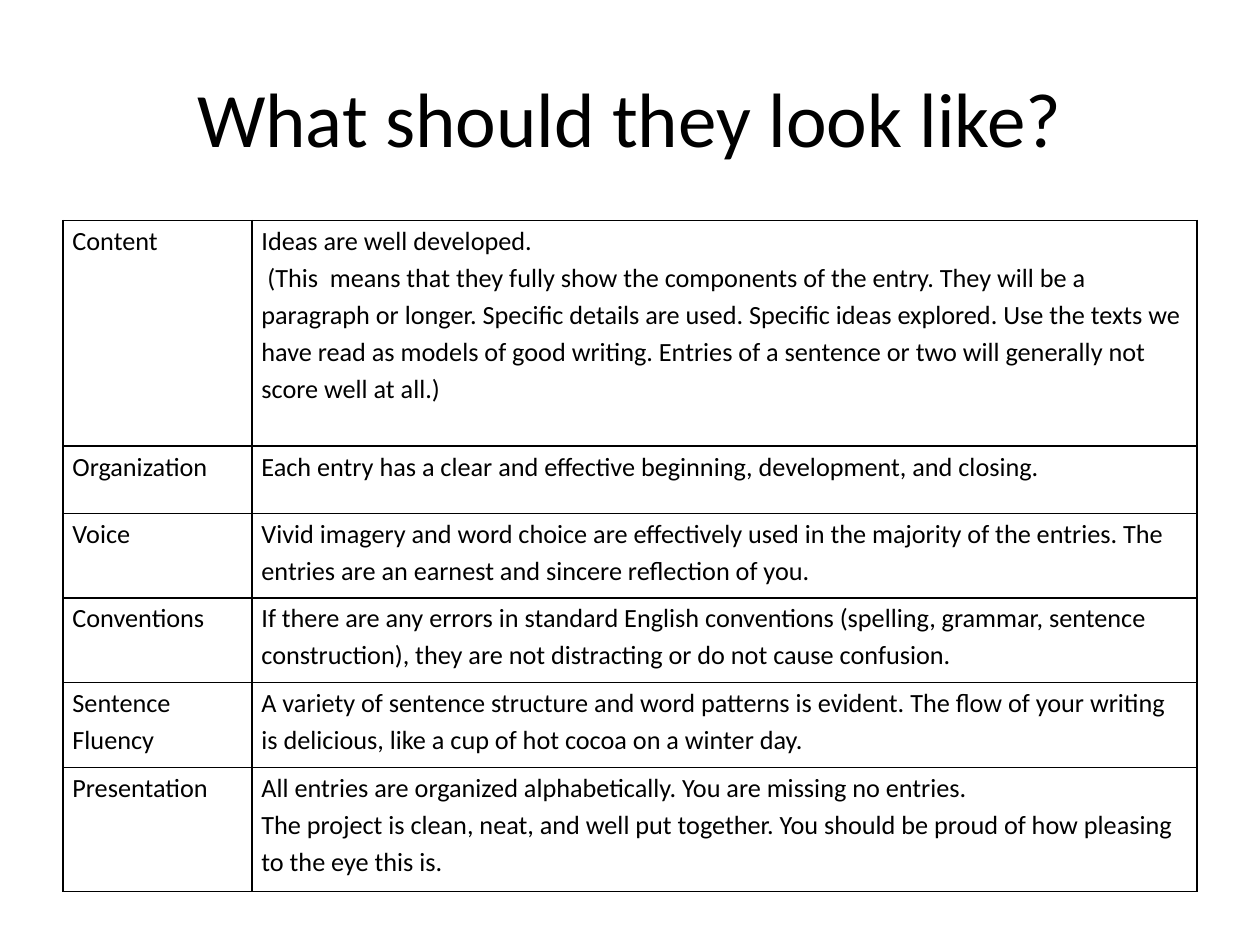
from dataclasses import dataclass

from lxml import etree
from pptx import Presentation
from pptx.dml.color import RGBColor
from pptx.enum.text import MSO_ANCHOR, PP_ALIGN
from pptx.oxml.ns import qn
from pptx.util import Pt

LEFT, CENTER = PP_ALIGN.LEFT, PP_ALIGN.CENTER
TOP, MIDDLE = MSO_ANCHOR.TOP, MSO_ANCHOR.MIDDLE
BLACK = RGBColor(0x00, 0x00, 0x00)
FONT = "Calibri"
TITLE_ONLY = 5
MARGIN = Pt(36)
COLUMN_WIDTHS = (Pt(108), Pt(540))
BORDER_WIDTH = Pt(1)


@dataclass(frozen=True)
class Criterion:
    name: str
    description: str
    height: float  # points


CRITERIA = (
    Criterion(
        "Content",
        "Ideas are well developed.\n"
        " (This  means that they fully show the components of the entry. They will be a "
        "paragraph or longer. Specific details are used. Specific ideas explored. Use the "
        "texts we have read as models of good writing. Entries of a sentence or two will "
        "generally not score well at all.)",
        129,
    ),
    Criterion(
        "Organization",
        "Each entry has a clear and effective beginning, development, and closing.",
        38.4,
    ),
    Criterion(
        "Voice",
        "Vivid imagery and word choice are effectively used in the majority of the entries. "
        "The entries are an earnest and sincere reflection of you.",
        48.4,
    ),
    Criterion(
        "Conventions",
        "If there are any errors in standard English conventions (spelling, grammar, sentence "
        "construction), they are not distracting or do not cause confusion.",
        48.4,
    ),
    Criterion(
        "Sentence Fluency",
        "A variety of sentence structure and word patterns is evident. The flow of your "
        "writing is delicious, like a cup of hot cocoa on a winter day.",
        48.4,
    ),
    Criterion(
        "Presentation",
        "All entries are organized alphabetically. You are missing no entries.\n"
        "The project is clean, neat, and well put together. You should be proud of how "
        "pleasing to the eye this is.",
        71,
    ),
)


def write_text(text_frame, text: str, *, size: float, alignment=LEFT,
               line_spacing: float = 1.0) -> None:
    """Write one paragraph per line of text."""
    text_frame.text = text
    for paragraph in text_frame.paragraphs:
        paragraph.alignment = alignment
        paragraph.line_spacing = line_spacing
        for run in paragraph.runs:
            run.font.name = FONT
            run.font.size = Pt(size)
            run.font.color.rgb = BLACK


def add_borders(cell) -> None:
    """Draw a solid line on all four sides; lines go before the cell's fill."""
    properties = cell._tc.get_or_add_tcPr()
    for index, side in enumerate(("a:lnL", "a:lnR", "a:lnT", "a:lnB")):
        line = etree.Element(qn(side), w=str(BORDER_WIDTH))
        fill = etree.SubElement(line, qn("a:solidFill"))
        etree.SubElement(fill, qn("a:srgbClr"), val=str(BLACK))
        properties.insert(index, line)


def fill_cell(cell, text: str) -> None:
    cell.margin_left = cell.margin_right = Pt(5.4)
    cell.margin_top = cell.margin_bottom = Pt(0)
    cell.vertical_anchor = TOP
    cell.fill.background()
    add_borders(cell)
    write_text(cell.text_frame, text, size=15, line_spacing=1.15)


def add_title(slide, text: str) -> None:
    title = slide.shapes.title
    title.left, title.top, title.width, title.height = MARGIN, Pt(21.6), Pt(648), Pt(90)
    title.text_frame.vertical_anchor = MIDDLE
    write_text(title.text_frame, text, size=44, alignment=CENTER)


def add_criteria_table(slide, criteria: tuple[Criterion, ...]) -> None:
    height = Pt(sum(criterion.height for criterion in criteria))
    table = slide.shapes.add_table(
        len(criteria), len(COLUMN_WIDTHS), MARGIN, Pt(126), sum(COLUMN_WIDTHS), height
    ).table
    table.first_row = table.horz_banding = False
    for column, width in zip(table.columns, COLUMN_WIDTHS):
        column.width = width
    for row, criterion in zip(table.rows, criteria):
        row.height = Pt(criterion.height)
        for cell, text in zip(row.cells, (criterion.name, criterion.description)):
            fill_cell(cell, text)


def main() -> None:
    presentation = Presentation()
    presentation.slide_width, presentation.slide_height = Pt(720), Pt(540)
    slide = presentation.slides.add_slide(presentation.slide_layouts[TITLE_ONLY])
    add_title(slide, "What should they look like?")
    add_criteria_table(slide, CRITERIA)
    presentation.save("out.pptx")


if __name__ == "__main__":
    main()
